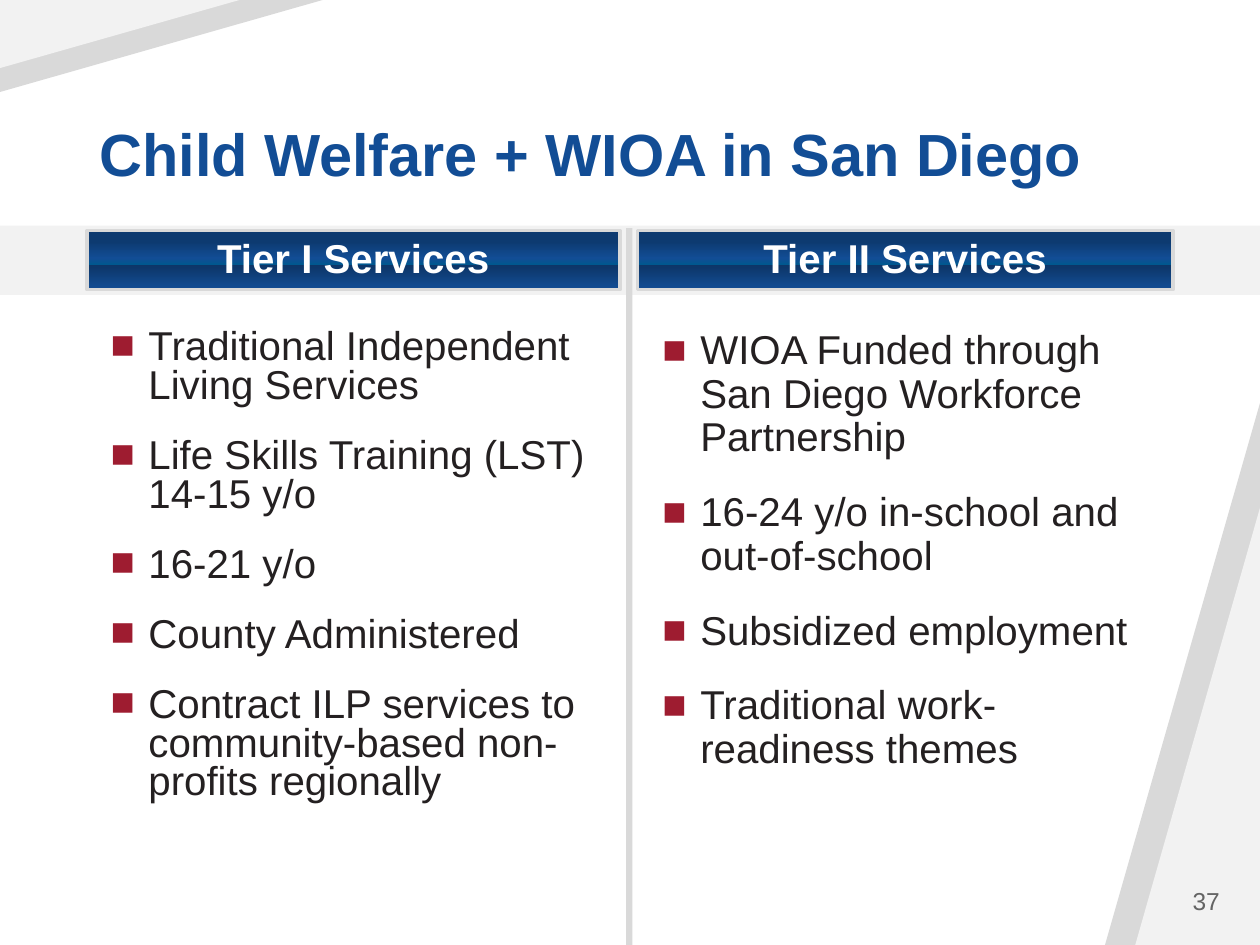
from dataclasses import dataclass

from lxml.etree import SubElement
from pptx import Presentation
from pptx.dml.color import RGBColor
from pptx.enum.shapes import MSO_SHAPE
from pptx.enum.text import MSO_ANCHOR, MSO_AUTO_SIZE, PP_ALIGN
from pptx.oxml.ns import qn
from pptx.util import Inches, Pt


@dataclass(frozen=True)
class Theme:
    """Colours, font and type sizes of the slide."""
    font: str = "Arial"
    blue: str = "124D95"
    ink: str = "242021"
    white: str = "FFFFFF"
    red: str = "9E1C30"
    mid: str = "D9D9D9"
    pale: str = "F2F2F2"
    gray: str = "646464"
    head: int = 34
    body: int = 23
    small: int = 14
    stops: tuple = ((19, "0D3A70"), (47, "124D95"), (58, "00588F"),
                    (59, "0D3668"), (100, "124D95"))


THEME = Theme()

TIERS = (
    (0.69, 4.23, 0.78, 0.8, "Tier I Services", (
        "Traditional Independent Living Services",
        "Life Skills Training (LST) 14-15 y/o",
        "16-21 y/o",
        "County Administered",
        "Contract ILP services to community-based non-profits regionally")),
    (5.06, 4.25, 5.16, 0.9, "Tier II Services", (
        "WIOA Funded through San Diego Workforce Partnership",
        "16-24 y/o in-school and out-of-school",
        "Subsidized employment",
        "Traditional work-readiness themes")),
)


def style(para, size, color, bold=False):
    """Format the runs of a paragraph."""
    for run in para.runs:
        font = run.font
        font.name, font.size, font.bold = THEME.font, Pt(size), bold
        font.color.rgb = RGBColor.from_string(color)


def add_block(slide, kind, box, color):
    """Add a plain filled shape without a line."""
    shape = slide.shapes.add_shape(kind, *map(Inches, box))
    shape.shadow.inherit = False
    shape.fill.solid()
    shape.fill.fore_color.rgb = RGBColor.from_string(color)
    shape.line.fill.background()
    return shape


def add_wedge(slide, box, color, turn=0):
    """Add a right-angled triangle that fills a slide corner."""
    wedge = add_block(slide, MSO_SHAPE.ISOSCELES_TRIANGLE, box, color)
    wedge.adjustments[0] = 1
    wedge.rotation = turn


def add_decor(slide):
    """Draw the corner wedges, the band and the divider."""
    add_wedge(slide, (8.77, 3.2, 1.23, 4.3), THEME.mid)
    add_wedge(slide, (9.01, 4.03, 0.99, 3.47), THEME.pale)
    add_wedge(slide, (0, 0, 2.56, 0.73), THEME.mid, 180)
    add_wedge(slide, (0, 0, 1.9, 0.54), THEME.pale, 180)
    add_block(slide, MSO_SHAPE.RECTANGLE, (0, 1.79, 10, 0.55), THEME.pale)
    add_block(slide, MSO_SHAPE.RECTANGLE, (4.97, 1.81, 0.05, 5.69), THEME.mid)


def set_title(slide, text):
    """Place and format the title."""
    title = slide.shapes.title
    title.left, title.top = Inches(0.69), Inches(0.4)
    title.width, title.height = Inches(8.62), Inches(1.15)
    frame = title.text_frame
    frame.text = text
    frame.vertical_anchor = MSO_ANCHOR.BOTTOM
    para = frame.paragraphs[0]
    para.alignment, para.line_spacing = PP_ALIGN.LEFT, 0.9
    style(para, THEME.head, THEME.blue, True)


def fill_sheen(shape):
    """Fill a shape with the blue vertical gradient."""
    shape.fill.gradient()
    shape.fill.gradient_angle = 270
    stops = shape.fill._fill._gradFill.find(qn("a:gsLst"))
    stops.clear()
    for pos, color in THEME.stops:
        stop = SubElement(stops, qn("a:gs"), pos=str(pos * 1000))
        SubElement(stop, qn("a:srgbClr"), val=color)


def add_header(slide, left, width, text):
    """Add the gradient heading bar of a column."""
    bar = add_block(slide, MSO_SHAPE.RECTANGLE, (left, 1.83, width, 0.47),
                    THEME.blue)
    fill_sheen(bar)
    bar.line.color.rgb = RGBColor.from_string(THEME.mid)
    bar.line.width = Pt(2)
    frame = bar.text_frame
    frame.margin_left = frame.margin_right = Inches(0.05)
    frame.margin_top = frame.margin_bottom = Inches(0.06)
    frame.vertical_anchor = MSO_ANCHOR.MIDDLE
    frame.auto_size = MSO_AUTO_SIZE.SHAPE_TO_FIT_TEXT
    frame.text = text
    para = frame.paragraphs[0]
    para.alignment, para.line_spacing = PP_ALIGN.CENTER, 0.9
    style(para, THEME.body, THEME.white, True)


def add_bullet(para):
    """Give a paragraph a red square and a hanging indent."""
    props = para._p.get_or_add_pPr()
    props.set("marL", str(Inches(0.3)))
    props.set("indent", str(-Inches(0.3)))
    color = SubElement(props, qn("a:buClr"))
    SubElement(color, qn("a:srgbClr"), val=THEME.red)
    SubElement(props, qn("a:buFont"), typeface=THEME.font)
    SubElement(props, qn("a:buChar"), char="■")


def add_list(slide, left, pitch, items):
    """Add the bullet list of a column."""
    box = slide.shapes.add_textbox(Inches(left), Inches(2.57),
                                   Inches(4.1), Inches(4.2))
    frame = box.text_frame
    frame.word_wrap = True
    frame.text = "\n".join(items)
    for rank, para in enumerate(frame.paragraphs):
        add_bullet(para)
        para.line_spacing = pitch
        para.space_before = Pt(18 if rank else 0)
        style(para, THEME.body, THEME.ink)


def add_number(slide, text):
    """Add the slide number."""
    box = slide.shapes.add_textbox(Inches(8.96), Inches(6.95),
                                   Inches(0.82), Inches(0.4))
    frame = box.text_frame
    frame.word_wrap = True
    frame.vertical_anchor = MSO_ANCHOR.MIDDLE
    frame.text = text
    para = frame.paragraphs[0]
    para.alignment = PP_ALIGN.RIGHT
    style(para, THEME.small, THEME.gray)


def main():
    """Build and save the slide."""
    deck = Presentation()
    deck.slide_width, deck.slide_height = Inches(10), Inches(7.5)
    slide = deck.slides.add_slide(deck.slide_layouts[5])
    add_decor(slide)
    set_title(slide, "Child Welfare + WIOA in San Diego")
    for left, width, inner, pitch, name, items in TIERS:
        add_header(slide, left, width, name)
        add_list(slide, inner, pitch, items)
    add_number(slide, "37")
    deck.save("out.pptx")


if __name__ == "__main__":
    main()
